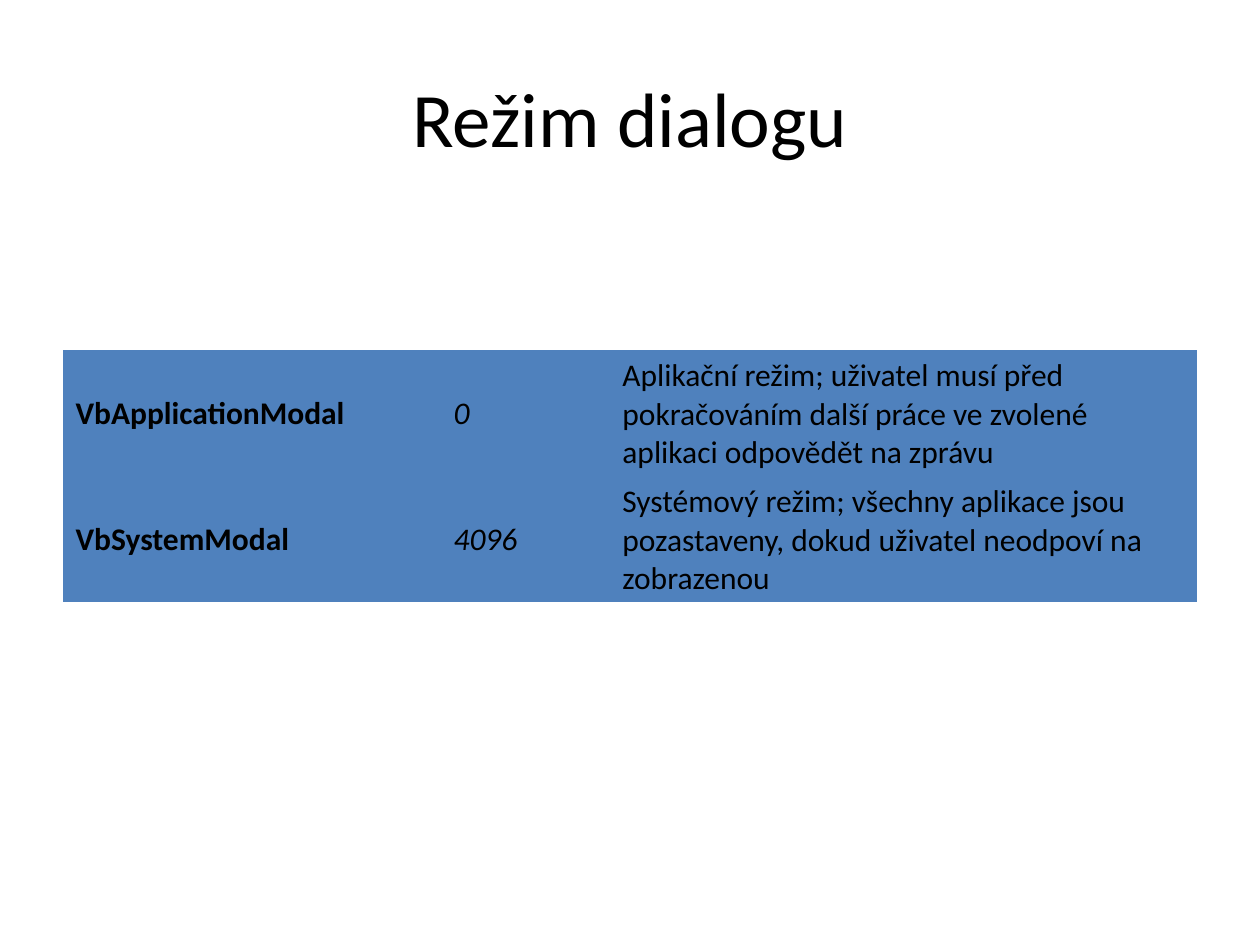
from pptx import Presentation, util as u
from pptx.dml.color import RGBColor
from pptx.enum import text as t

# Content
HEADING = "Režim dialogu"
MODES = [
    ("VbApplicationModal", "0",
     "Aplikační režim; uživatel musí před pokračováním další práce "
     "ve zvolené aplikaci odpovědět na zprávu"),
    ("VbSystemModal", "4096",
     "Systémový režim; všechny aplikace jsou pozastaveny, "
     "dokud uživatel neodpoví na zobrazenou"),
]
COLUMN_FORMATS = [{"bold": True}, {"italic": True}, {}]

# Look and layout, in inches
COLORS = {"ink": "000000", "cell": "4F81BD"}
FONT = "Calibri"
NO_GRID_STYLE = "{2D5ABB26-0587-4C30-8999-92F81FD0307C}"
WIDTH, HEIGHT = 10, 7.5
MARGIN = WIDTH * 0.05
CONTENT_WIDTH = WIDTH - 2 * MARGIN
HEADING_TOP, HEADING_HEIGHT = HEIGHT * 0.04, 1.25
MODES_TOP, ROW_HEIGHT = 2.78, 1
COLUMN_WIDTHS = [3, 1.34, 4.66]


def write(frame, content, size=18, bold=False, italic=False, align=t.PP_ALIGN.LEFT):
    frame.word_wrap = True
    paragraph = frame.paragraphs[0]
    paragraph.alignment = align
    run = paragraph.add_run()
    run.text = content
    font = run.font
    font.name, font.size = FONT, u.Pt(size)
    font.bold, font.italic = bold, italic
    font.color.rgb = RGBColor.from_string(COLORS["ink"])


deck = Presentation()
deck.slide_width, deck.slide_height = u.Inches(WIDTH), u.Inches(HEIGHT)
slide = deck.slides.add_slide(deck.slide_layouts[6])

# Heading
heading = slide.shapes.add_textbox(
    *map(u.Inches, (MARGIN, HEADING_TOP, CONTENT_WIDTH, HEADING_HEIGHT))).text_frame
heading.vertical_anchor = t.MSO_ANCHOR.MIDDLE
write(heading, HEADING, size=44, align=t.PP_ALIGN.CENTER)

# Table of dialog modes
modes_frame = slide.shapes.add_table(
    len(MODES), len(COLUMN_WIDTHS),
    *map(u.Inches, (MARGIN, MODES_TOP, CONTENT_WIDTH, ROW_HEIGHT * len(MODES))))
modes = modes_frame.table
modes.first_row = modes.horz_banding = False
modes_frame.element.xpath(".//a:tableStyleId")[0].text = NO_GRID_STYLE
for column, width in zip(modes.columns, COLUMN_WIDTHS):
    column.width = u.Inches(width)
for row, values in zip(modes.rows, MODES):
    for cell, value, style in zip(row.cells, values, COLUMN_FORMATS):
        cell.fill.solid()
        cell.fill.fore_color.rgb = RGBColor.from_string(COLORS["cell"])
        cell.vertical_anchor = t.MSO_ANCHOR.MIDDLE
        write(cell.text_frame, value, **style)

deck.save("out.pptx")
